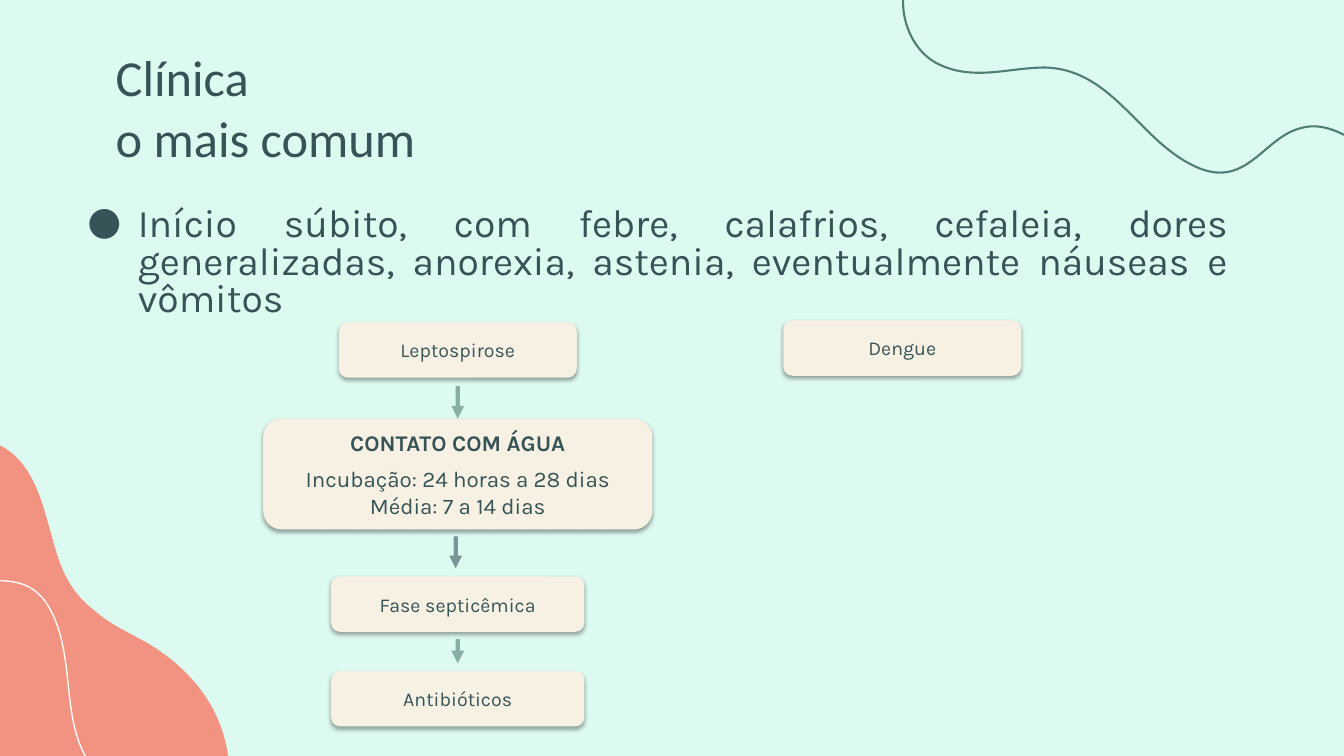
from lxml.etree import SubElement
from pptx import Presentation
from pptx.dml.color import RGBColor
from pptx.enum.shapes import MSO_CONNECTOR, MSO_SHAPE
from pptx.enum.text import MSO_ANCHOR as Anchor, PP_ALIGN as Align
from pptx.oxml.ns import qn
from pptx.util import Pt

MINT = RGBColor(0xDD, 0xFA, 0xF0)
CORAL = RGBColor(0xF2, 0x92, 0x80)
CREAM = RGBColor(0xF7, 0xF1, 0xE4)
GREEN = RGBColor(0x51, 0x7E, 0x72)
SLATE = RGBColor(0x36, 0x54, 0x58)
WHITE = RGBColor(0xFF, 0xFF, 0xFF)

TITLE = "Clínica\vo mais comum"
SIGNS = ("Início súbito, com febre, calafrios, cefaleia, dores generalizadas, "
         "anorexia, astenia, eventualmente náuseas e vômitos")
FLOW_X, SIDE_X = 327, 644.5
# centre x, top, width, height, heading, details
BOXES = [
    (FLOW_X, 230.2, 170, 39.6, "Leptospirose", []),
    (SIDE_X, 228.8, 170, 39.6, "Dengue", []),
    (FLOW_X, 299, 278, 79.2, "CONTATO COM ÁGUA",
     ["Incubação: 24 horas a 28 dias", "Média: 7 a 14 dias"]),
    (FLOW_X, 411.8, 181, 39.6, "Fase septicêmica", []),
    (FLOW_X, 479.3, 181, 39.6, "Antibióticos", []),
]
# x, start y, end y, colour, box whose top it meets
ARROWS = [
    (FLOW_X, 275.8, 299, GREEN, "CONTATO COM ÁGUA"),
    (325.5, 383.2, 406, SLATE, None),
    (FLOW_X, 456.5, 473.8, GREEN, None),
]

# Curves: start point, then cubic segments (two handles and an end)
UNIT = Pt(0.72)
BLOB = [(-205, 634), [
    (-211, 654, -215, 674, -216, 694), (-221, 734, -215, 778, -196, 816),
    (-174, 863, -130, 895, -88, 926), (-45, 949, -1, 960, 50, 949),
    (99, 939, 153, 917, 190, 882), (205, 867, 216, 848, 222, 827),
    (229, 805, 230, 780, 227, 756), (222, 705, 192, 666, 148, 639),
    (129, 628, 110, 620, 94, 606), (77, 593, 66, 577, 59, 557),
    (45, 519, 40, 455, -7, 439), (-64, 420, -123, 490, -152, 529),
    (-175, 561, -194, 597, -205, 634)]]
THREAD = [(-54, 918), [
    (-51, 920, -48, 921, -45, 923), (22, 957, 125, 982, 177, 913),
    (191, 894, 197, 865, 185, 843), (168, 809, 133, 799, 106, 776),
    (53, 732, 80, 658, 49, 603), (23, 558, -21, 587, -56, 571),
    (-96, 553, -88, 487, -127, 468), (-142, 460, -157, 473, -167, 486),
    (-220, 555, -229, 660, -198, 748), (-173, 822, -119, 883, -54, 918)]]
WAVE = [(1074, -143), [
    (1070, -143, 1067, -142, 1063, -141), (990, -126, 893, -82, 896, 5),
    (897, 29, 910, 55, 934, 65), (968, 80, 1002, 67, 1037, 67),
    (1106, 69, 1131, 143, 1190, 167), (1238, 186, 1254, 136, 1291, 127),
    (1334, 115, 1369, 172, 1411, 163), (1428, 160, 1432, 140, 1432, 124),
    (1430, 37, 1371, -51, 1292, -101), (1226, -143, 1146, -156, 1074, -143)]]


def add_curve(slide, start, curves, fill=None, line=None, width=0):
    """Draw the chain of end points, then bend each side into a cubic curve."""
    ends = [curve[4:] for curve in curves]
    pen = slide.shapes.build_freeform(*start, scale=UNIT)
    pen.add_line_segments(ends, close=True)
    shape = pen.convert_to_shape()
    left, top = (min(axis) for axis in zip(start, *ends))
    sides = list(shape._element.iter(qn("a:lnTo")))
    for side, curve in zip(sides, curves):
        bend = side.makeelement(qn("a:cubicBezTo"))
        for x, y in zip(curve[::2], curve[1::2]):
            SubElement(bend, qn("a:pt"), x=str(x - left), y=str(y - top))
        side.getparent().replace(side, bend)
    shape.shadow.inherit = False
    paint(shape, fill, line, width)


def paint(shape, fill=None, line=None, width=0):
    if fill is None:
        shape.fill.background()
    else:
        shape.fill.solid()
        shape.fill.fore_color.rgb = fill
    if line is None:
        shape.line.fill.background()
    else:
        shape.line.color.rgb = line
        shape.line.width = Pt(width)


def write(para, text, size, font="Karla", bold=False, align=Align.LEFT, after=0):
    para.text = text
    para.alignment = align
    para.space_after = Pt(after)
    for run in para.runs:
        run.font.name, run.font.size = font, Pt(size)
        run.font.bold, run.font.color.rgb = bold, SLATE
    return para


def add_text(slide, left, top, width, height, text, **form):
    frame = slide.shapes.add_textbox(Pt(left), Pt(top), Pt(width), Pt(height)).text_frame
    frame.word_wrap = True
    frame.margin_left = frame.margin_right = Pt(7.2)
    frame.margin_top = frame.margin_bottom = Pt(7.2)
    return write(frame.paragraphs[0], text, **form)


def add_bullet(para):
    props = para._p.get_or_add_pPr()
    props.set("marL", str(Pt(48.2)))
    props.set("indent", str(-Pt(36)))
    SubElement(props, qn("a:buFont"), typeface="Karla")
    SubElement(props, qn("a:buChar"), char="●")


def drop_shadow(shape):
    shape.shadow.inherit = False
    effects = shape._element.spPr.find(qn("a:effectLst"))
    shade = SubElement(effects, qn("a:outerShdw"), blurRad=str(Pt(3.1)),
                       dist=str(Pt(1.8)), dir="5400000", rotWithShape="0")
    black = SubElement(shade, qn("a:srgbClr"), val="000000")
    SubElement(black, qn("a:alpha"), val="35000")


def add_box(slide, mid, top, width, height, head, details):
    box = slide.shapes.add_shape(MSO_SHAPE.ROUNDED_RECTANGLE, Pt(mid - width / 2),
                                 Pt(top), Pt(width), Pt(height))
    paint(box, CREAM)
    drop_shadow(box)
    frame = box.text_frame
    frame.word_wrap = True
    frame.vertical_anchor = Anchor.MIDDLE
    size = 16 if details else 14
    write(frame.paragraphs[0], head, size, bold=bool(details),
          align=Align.CENTER, after=7 if details else 0)
    for text in details:
        write(frame.add_paragraph(), text, size, align=Align.CENTER)
    return box


def add_arrow(slide, x, top, end, color, target):
    arrow = slide.shapes.add_connector(MSO_CONNECTOR.STRAIGHT, Pt(x), Pt(top), Pt(x), Pt(end))
    if target is not None:
        arrow.end_connect(target, 0)
    arrow.line.color.rgb = color
    arrow.line.width = Pt(3)
    props = arrow._element.spPr
    line = props.find(qn("a:ln"))
    SubElement(line.find(".//" + qn("a:srgbClr")), qn("a:alpha"), val="60000")
    SubElement(line, qn("a:tailEnd"), type="triangle")
    SubElement(props, qn("a:effectLst"))


def main():
    deck = Presentation()
    deck.slide_width, deck.slide_height = Pt(960), Pt(540)
    slide = deck.slides.add_slide(deck.slide_layouts[6])
    slide.background.fill.solid()
    slide.background.fill.fore_color.rgb = MINT

    add_curve(slide, *BLOB, fill=CORAL)
    add_curve(slide, *THREAD, line=WHITE, width=0.95)
    add_curve(slide, *WAVE, line=GREEN, width=1.5)

    add_text(slide, 75.6, 26, 809, 91, TITLE, size=36, font="Calibri")
    signs = add_text(slide, 43.2, 141.2, 841, 342, SIGNS, size=27.9,
                     align=Align.JUSTIFY, after=12)
    signs.line_spacing = 0.8
    add_bullet(signs)

    boxes = {row[4]: add_box(slide, *row) for row in BOXES}
    for x, top, end, color, target in ARROWS:
        add_arrow(slide, x, top, end, color, boxes.get(target))
    deck.save("out.pptx")


if __name__ == "__main__":
    main()
